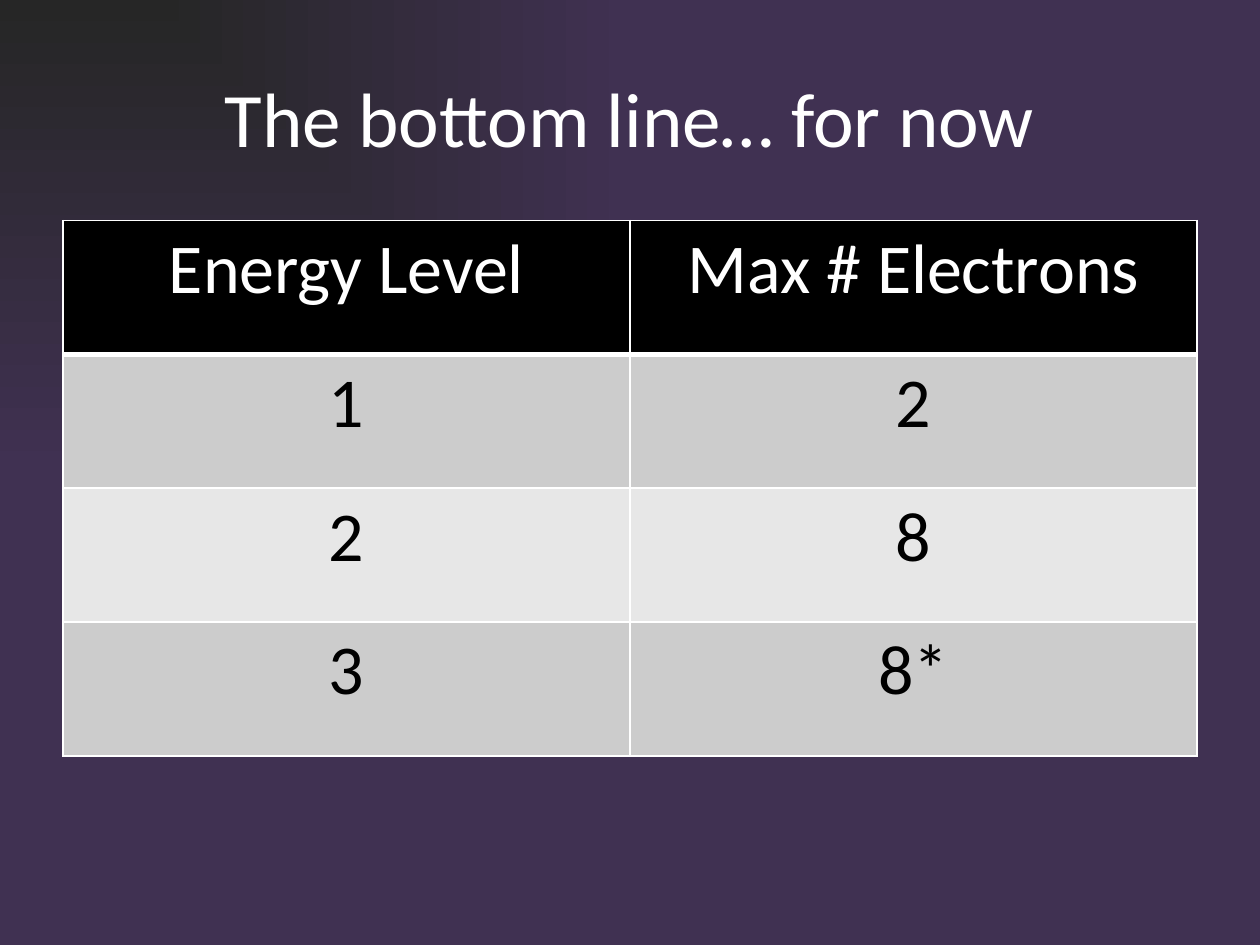
from lxml.etree import SubElement
from pptx import Presentation
from pptx.dml.color import RGBColor
from pptx.enum.text import MSO_ANCHOR, PP_ALIGN
from pptx.oxml.ns import qn
from pptx.util import Inches, Pt

WHITE = RGBColor(0xFF, 0xFF, 0xFF)
BLACK = RGBColor(0x00, 0x00, 0x00)
CHARCOAL = RGBColor(0x26, 0x26, 0x26)
PURPLE = RGBColor(0x40, 0x31, 0x52)
BAND_DARK = RGBColor(0xCC, 0xCC, 0xCC)
BAND_LIGHT = RGBColor(0xE7, 0xE7, 0xE7)

ROWS = [
    ("Energy Level", "Max # Electrons"),
    ("1", "2"),
    ("2", "8"),
    ("3", "8*"),
]


class SlideBuilder:
    font = "Calibri"

    def __init__(self, slide):
        self.s = slide

    def background(self, start, end):
        """Gradient spreading from the top left corner."""
        fill = self.s.background.fill
        fill.gradient()
        for stop, color, position in zip(fill.gradient_stops, (start, end), (0, 1)):
            stop.color.rgb = color
            stop.position = position
        grad = self.s.element.find(".//" + qn("a:gradFill"))
        grad.remove(grad.find(qn("a:lin")))
        shade = SubElement(grad, qn("a:path"), {"path": "rect"})
        SubElement(shade, qn("a:fillToRect"), {"r": "100000", "b": "100000"})

    def set_text(self, tf, text, size, color):
        p = tf.paragraphs[0]
        p.text = text
        p.alignment = PP_ALIGN.CENTER
        p.font.name = self.font
        p.font.size = Pt(size)
        p.font.bold = False
        p.font.color.rgb = color

    def title(self, text, x, y, w, h):
        tf = self.s.shapes.add_textbox(Inches(x), Inches(y), Inches(w), Inches(h)).text_frame
        tf.word_wrap = True
        tf.vertical_anchor = MSO_ANCHOR.MIDDLE
        self.set_text(tf, text, 44, WHITE)

    def borders(self, cell, color, bottom=1):
        tc_pr = cell._tc.get_or_add_tcPr()
        for side, width in (("L", 1), ("R", 1), ("T", 1), ("B", bottom)):
            ln = SubElement(tc_pr, qn("a:ln" + side), {"w": str(Pt(width))})
            solid = SubElement(ln, qn("a:solidFill"))
            SubElement(solid, qn("a:srgbClr"), {"val": str(color)})

    def table(self, rows, x, y, w, h):
        table = self.s.shapes.add_table(
            len(rows), len(rows[0]), Inches(x), Inches(y), Inches(w), Inches(h)
        ).table
        for i, row in enumerate(rows):
            header = i == 0
            band = BLACK if header else (BAND_LIGHT, BAND_DARK)[i % 2]
            for j, text in enumerate(row):
                cell = table.cell(i, j)
                self.borders(cell, WHITE, bottom=3 if header else 1)
                cell.fill.solid()
                cell.fill.fore_color.rgb = band
                self.set_text(cell.text_frame, text, 40, WHITE if header else BLACK)


def main():
    prs = Presentation()
    prs.slide_width, prs.slide_height = Inches(10), Inches(7.5)
    builder = SlideBuilder(prs.slides.add_slide(prs.slide_layouts[6]))

    # Background and title
    builder.background(CHARCOAL, PURPLE)
    builder.title("The bottom line… for now", 0.5, 0.3, 9, 1.25)

    # Electrons per energy level
    builder.table(ROWS, 0.5, 1.75, 9, 4.25)

    prs.save("out.pptx")


if __name__ == "__main__":
    main()
